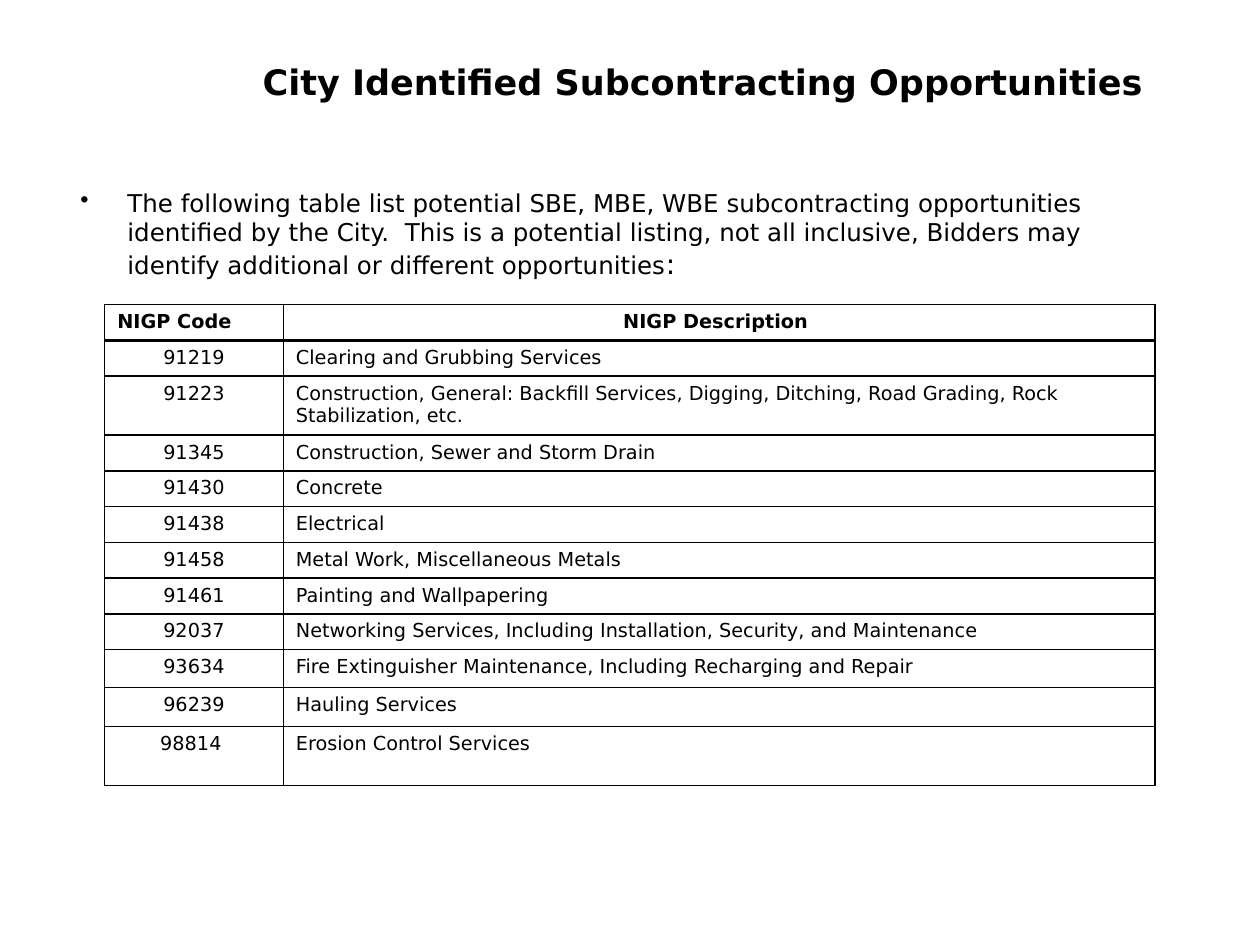
from lxml.etree import SubElement
from pptx import Presentation
from pptx.dml.color import RGBColor
from pptx.enum.text import MSO_ANCHOR as Anchor, MSO_AUTO_SIZE as Fit, PP_ALIGN as Align
from pptx.oxml.ns import qn
from pptx.util import Cm, Pt

FONT, BLACK, WHITE = "DejaVu Sans", "000000", "FFFFFF"
TITLE = "City Identified Subcontracting Opportunities "
INTRO = [
    ("The following table list potential SBE, MBE, WBE subcontracting opportunities "
     "identified by the City.  This is a potential listing, not all inclusive, "
     "Bidders may identify additional or different opportunities", 14),
    (":", 16),
]
HEAD = ("NIGP Code", "NIGP Description ")
CODES = [
    ("91219", "Clearing and Grubbing Services"),
    ("91223", "Construction, General: Backfill Services, Digging, Ditching, "
              "Road Grading, Rock Stabilization, etc."),
    ("91345", "Construction, Sewer and Storm Drain"),
    ("91430", "Concrete"),
    ("91438", "Electrical"),
    ("91458", "Metal Work, Miscellaneous Metals"),
    ("91461", "Painting and Wallpapering"),
    ("92037", "Networking Services, Including Installation, Security, and Maintenance"),
    ("93634", "Fire Extinguisher Maintenance, Including Recharging and Repair"),
    ("96239", "Hauling Services"),
    ("98814 ", "Erosion Control Services"),
]
WIDTHS = (3.6, 17.57)
ROW = 0.71
TALL = {9: 0.76, 10: 0.79, 11: 1.19}


def color(code):
    return RGBColor.from_string(code)


def style(font, size, bold=False):
    look = {"name": FONT, "size": Pt(size), "bold": bold}
    for key, value in look.items():
        setattr(font, key, value)
    font.color.rgb = color(BLACK)


def place(shape, *box):
    for key, value in zip(("left", "top", "width", "height"), box):
        setattr(shape, key, Cm(value))


def border(cell, base):
    """Draw the four cell edges; base is the bottom width in points."""
    props = cell._tc.get_or_add_tcPr()
    widths = {"a:lnL": 1, "a:lnR": 1, "a:lnT": 1, "a:lnB": base}
    for spot, (tag, width) in enumerate(widths.items()):
        line = props.makeelement(qn(tag), {"w": str(Pt(width))})
        fill = SubElement(line, qn("a:solidFill"))
        SubElement(fill, qn("a:srgbClr"), val=BLACK)
        props.insert(spot, line)


def add_title(slide):
    title = slide.shapes.title
    place(title, 4.45, 0.76, 19.69, 1.78)
    frame = title.text_frame
    frame.text = TITLE
    frame.word_wrap = True
    frame.auto_size = Fit.NONE
    frame.vertical_anchor = Anchor.MIDDLE
    para = frame.paragraphs[0]
    para.alignment = Align.CENTER
    style(para.runs[0].font, 20, True)


def add_intro(slide):
    box = slide.shapes.add_textbox(Cm(1.37), Cm(3.66), Cm(22.66), Cm(2.13))
    frame = box.text_frame
    frame.word_wrap = True
    frame.auto_size = Fit.SHAPE_TO_FIT_TEXT
    para = frame.paragraphs[0]
    props = para._p.get_or_add_pPr()
    props.set("marL", str(Cm(0.95)))
    props.set("indent", str(-Cm(0.95)))
    SubElement(props, qn("a:buChar"), char="•")
    para.space_after = Pt(6)
    for text, size in INTRO:
        run = para.add_run()
        run.text = text
        style(run.font, size)


def add_codes(slide):
    rows = [HEAD] + CODES
    highs = [TALL.get(i, ROW) for i in range(len(rows))]
    table = slide.shapes.add_table(
        len(rows), len(HEAD), Cm(2.11), Cm(6.14), Cm(sum(WIDTHS)), Cm(sum(highs))).table
    for col, width in zip(table.columns, WIDTHS):
        col.width = Cm(width)
    for i, (row, high) in enumerate(zip(rows, highs)):
        table.rows[i].height = Cm(high)
        head = i == 0
        for j, text in enumerate(row):
            cell = table.cell(i, j)
            cell.text = text
            cell.fill.solid()
            cell.fill.fore_color.rgb = color(WHITE)
            border(cell, 2 if head else 1)
            para = cell.text_frame.paragraphs[0]
            # Codes are centred below the header, descriptions only in it
            para.alignment = Align.CENTER if head == (j == 1) else Align.LEFT
            style(para.runs[0].font, 11, head)


def main():
    deck = Presentation()
    deck.slide_width, deck.slide_height = Cm(25.4), Cm(19.05)
    slide = deck.slides.add_slide(deck.slide_layouts[5])
    add_title(slide)
    add_intro(slide)
    add_codes(slide)
    deck.save("out.pptx")


if __name__ == "__main__":
    main()
